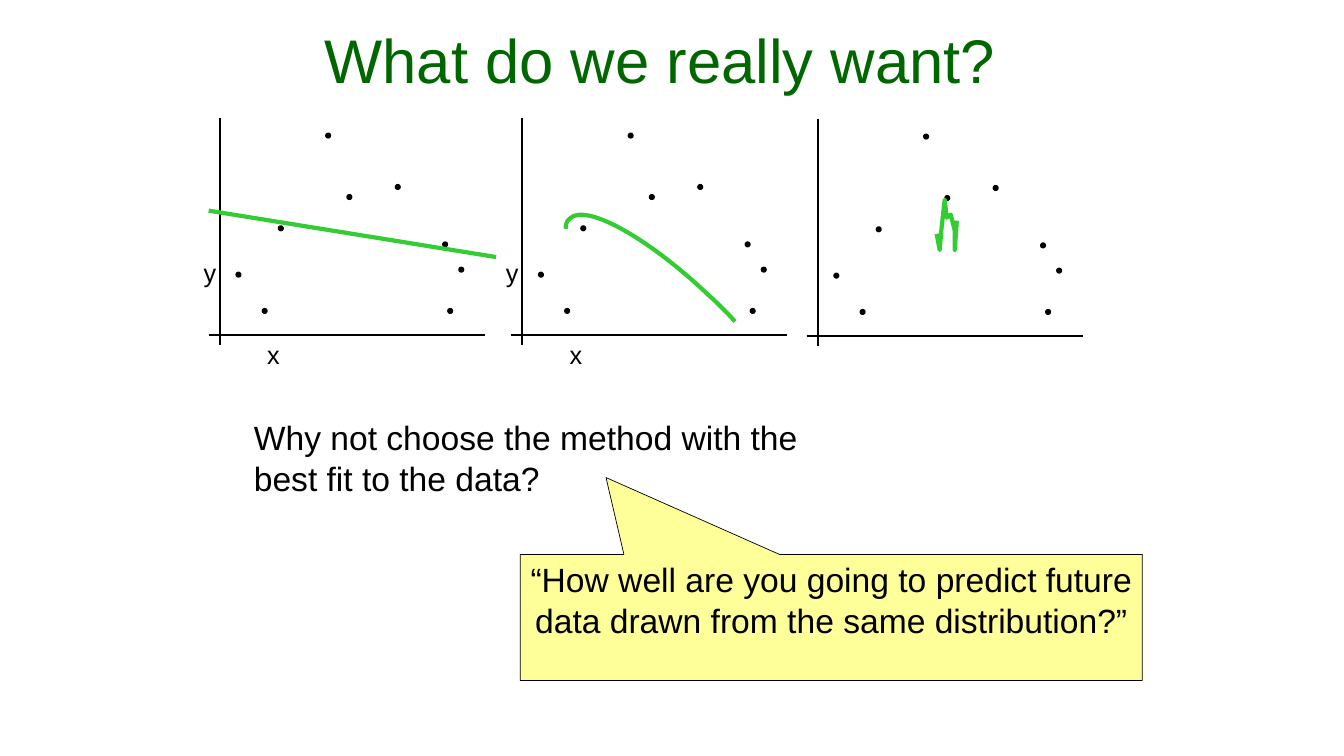
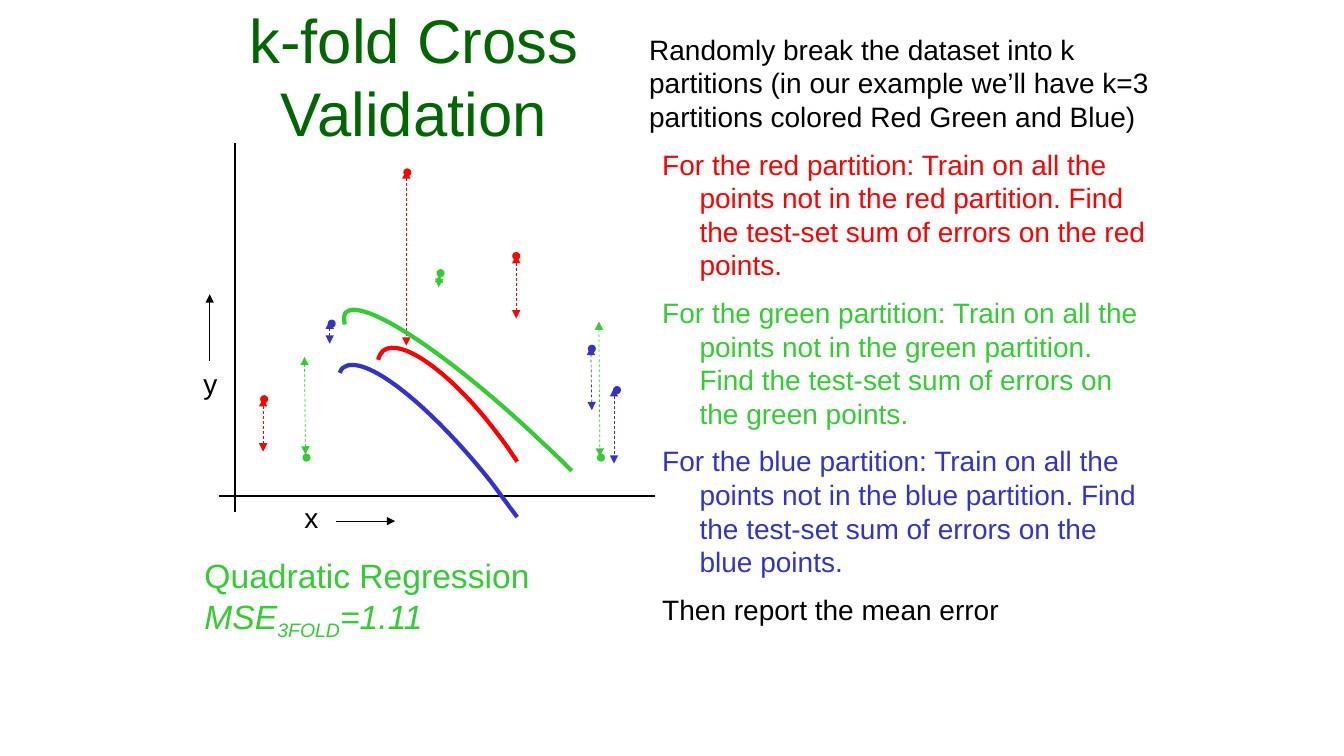
import pptx
import pptx.util
import pptx.dml.color
import pptx.enum.dml
import pptx.enum.shapes
import pptx.enum.text
import pptx.oxml
import pptx.oxml.ns
from pptx.util import Inches

FONT = "Arial"
BLACK, TITLE, NOTE = "000000", "006600", "FFFF99"
RED, GREEN, BLUE = "FF0000", "33CC33", "3333CC"
SHAPE = pptx.enum.shapes.MSO_SHAPE
ALIGN = pptx.enum.text.PP_ALIGN
ANCHOR = pptx.enum.text.MSO_ANCHOR
qn = pptx.oxml.ns.qn
NS = pptx.oxml.ns.nsdecls("a")

# Data points, from the top left of a small plot
POINTS = [(0.27, 1.53), (0.53, 1.89), (0.69, 1.07), (1.16, 0.15), (1.37, 0.76),
          (1.85, 0.66), (2.37, 1.89), (2.48, 1.48), (2.32, 1.23)]
QUADRATIC = [(2.22, 2.02), (2.14, 1.93), (2.05, 1.84), (1.96, 1.76), (1.35, 1.18),
             (0.73, 0.84), (0.58, 1), (0.55, 1.02), (0.54, 1.06), (0.54, 1.1)]
JOINED = [(1.29, 1.14), (1.32, 1.3), (1.34, 1.07), (1.37, 0.8), (1.39, 0.98),
          (1.43, 0.95), (1.47, 1.11), (1.47, 1.3), (1.49, 1.01)]

# Each fold: colour, points, error spans, Bezier controls of its fitted curve
FOLDS = [
    (RED, [(0.41, 2.5), (1.83, 0.25), (2.91, 1.08)],
     [(0.44, 2.53, 0.44, 3.06), (1.86, 0.27, 1.86, 2.01), (2.95, 1.11, 2.95, 1.74)],
     [(2.96, 3.16), (2.9, 3.07), (2.84, 2.98), (2.77, 2.89), (2.32, 2.29),
      (1.81, 1.92), (1.63, 2.06), (1.61, 2.08), (1.59, 2.11), (1.58, 2.15)]),
    (GREEN, [(0.83, 3.08), (2.16, 1.25), (3.75, 3.08)],
     [(0.86, 3.09, 0.85, 2.12), (3.77, 1.77, 3.78, 3.11), (2.19, 1.3, 2.18, 1.43)],
     [(3.5, 3.25), (3.41, 3.16), (3.32, 3.07), (3.23, 2.99), (2.3, 2.1),
      (1.42, 1.52), (1.26, 1.68), (1.24, 1.7), (1.24, 1.75), (1.25, 1.8)]),
    (BLUE, [(1.08, 1.75), (3.91, 2.41), (3.66, 2)],
     [(1.1, 1.99, 1.1, 1.76), (3.69, 2.02, 3.7, 2.65), (3.92, 2.43, 3.92, 3.18)],
     [(2.96, 3.71), (2.87, 3.59), (2.79, 3.48), (2.7, 3.36), (2.08, 2.58),
      (1.43, 2.07), (1.23, 2.23), (1.22, 2.24), (1.21, 2.25), (1.2, 2.28)]),
]


def rgb(value):
    return pptx.dml.color.RGBColor.from_string(value)


# Text
def add_run(p, text, size=20, color=BLACK, italic=False, baseline=0):
    r = p.add_run()
    r.text = text
    r.font.name, r.font.size = FONT, pptx.util.Pt(size)
    r.font.color.rgb = rgb(color)
    if italic:
        r.font.italic = True
    if baseline:
        r._r.get_or_add_rPr().set("baseline", str(baseline * 1000))


def add_text(s, box, text, align=ALIGN.LEFT, anchor=ANCHOR.TOP, **fmt):
    tf = s.shapes.add_textbox(*map(Inches, box)).text_frame
    tf.word_wrap, tf.vertical_anchor = True, anchor
    tf.paragraphs[0].alignment = align
    add_run(tf.paragraphs[0], text, **fmt)
    return tf


def add_title(s, box, text):
    add_text(s, box, text, ALIGN.CENTER, ANCHOR.BOTTOM, size=44, color=TITLE)


# Drawing
def add_line(s, x1, y1, x2, y2, color=BLACK, width=1.5, dash=False, ends=()):
    line = s.shapes.add_connector(pptx.enum.shapes.MSO_CONNECTOR.STRAIGHT,
                                  *map(Inches, (x1, y1, x2, y2)))
    line.line.color.rgb = rgb(color)
    line.line.width = pptx.util.Pt(width)
    if dash:
        line.line.dash_style = pptx.enum.dml.MSO_LINE.DASH
    spPr = line._element.spPr
    for end in ends:
        spPr.find(qn("a:ln")).append(
            pptx.oxml.parse_xml(f'<a:{end} {NS} type="triangle"/>'))
    spPr.append(pptx.oxml.parse_xml(f"<a:effectLst {NS}/>"))


def add_filled(s, shape, box, fill, line=None, width=0.75):
    sp = s.shapes.add_shape(shape, *map(Inches, box))
    sp.shadow.inherit = False
    sp.fill.solid()
    sp.fill.fore_color.rgb = rgb(fill)
    if line:
        sp.line.color.rgb = rgb(line)
        sp.line.width = pptx.util.Pt(width)
    else:
        sp.line.fill.background()
    return sp


def add_path(s, x, y, points, color):
    pts = [(Inches(x + px), Inches(y + py)) for px, py in points]
    builder = s.shapes.build_freeform(*pts[0])
    builder.add_line_segments(pts[1:], close=False)
    sp = builder.convert_to_shape()
    sp.shadow.inherit = False
    sp.fill.background()
    sp.line.color.rgb = rgb(color)
    sp.line.width = pptx.util.Pt(3)
    return sp


def add_curve(s, x, y, controls, color):
    """Draw cubic curves: each three segments become one Bezier."""
    sp = add_path(s, x, y, controls, color)
    segments = list(sp._element.iter(qn("a:lnTo")))
    for i in range(0, len(segments), 3):
        curve = pptx.oxml.parse_xml(f"<a:cubicBezTo {NS}/>")
        segments[i].addprevious(curve)
        for segment in segments[i:i + 3]:
            curve.append(segment[0])
            segment.getparent().remove(segment)


# Axes cross inset from the left and the bottom of the plot box
def add_axes(s, x, y, w, h, inset_x, inset_y):
    add_line(s, x + inset_x, y, x + inset_x, y + h)
    add_line(s, x, y + h - inset_y, x + w, y + h - inset_y)


def small_plot(s, x, y, labels=True):
    add_axes(s, x, y, 2.74, 2.25, 0.11, 0.1)
    for px, py in POINTS:
        add_filled(s, SHAPE.OVAL, (x + px, y + py, 0.05, 0.05), BLACK, BLACK)
    if labels:
        add_text(s, (x + 0.48, y + 2.15, 0.21, 0.4), "x", size=18)
        add_text(s, (x - 0.15, y + 1.33, 0.21, 0.4), "y", size=18)


def fold_plot(s, x, y):
    add_axes(s, x, y, 4.33, 3.66, 0.16, 0.16)
    add_text(s, (x + 0.75, y + 3.5, 0.33, 0.43), "x")
    add_line(s, x + 1.16, y + 3.75, x + 1.75, y + 3.75, width=0.75, ends=["tailEnd"])
    add_text(s, (x - 0.25, y + 2.17, 0.33, 0.43), "y")
    add_line(s, x - 0.09, y + 2.16, x - 0.09, y + 1.5, width=0.75, ends=["tailEnd"])
    for color, points, errors, curve in FOLDS:
        for px, py in points:
            add_filled(s, SHAPE.OVAL, (x + px, y + py, 0.08, 0.08), color)
        for x1, y1, x2, y2 in errors:
            add_line(s, x + x1, y + y1, x + x2, y + y2, color, 0.5, True,
                     ["headEnd", "tailEnd"])
        add_curve(s, x, y, curve, color)


def fold_steps(s, box):
    tf = add_text(s, box, "Randomly break the dataset into k partitions (in our example "
                  "we’ll have k=3 partitions colored Red Green and Blue)")
    steps = [(f"For the {name} partition: Train on all the points not in the {name} "
              f"partition. Find the test-set sum of errors on the {name} points.", color)
             for name, color in (("red", RED), ("green", GREEN), ("blue", BLUE))]
    for text, color in steps + [("Then report the mean error", BLACK)]:
        p = tf.add_paragraph()
        p.level = 1
        p.space_before = pptx.util.Pt(10)
        pPr = p._p.get_or_add_pPr()
        pPr.set("marL", str(Inches(0.5)))
        pPr.set("indent", str(Inches(-0.37)))
        add_run(p, text, color=color)


def callout(s, box, text):
    sp = add_filled(s, SHAPE.RECTANGULAR_CALLOUT, box, NOTE, BLACK, 0.5)
    sp.adjustments[0], sp.adjustments[1] = -0.362, -1.11
    tf = sp.text_frame
    tf.word_wrap, tf.vertical_anchor = True, ANCHOR.TOP
    tf.paragraphs[0].alignment = ALIGN.CENTER
    add_run(tf.paragraphs[0], text, size=24)


# Slides
def fit_slide(s):
    add_title(s, (0.33, 0.17, 12.44, 0.83), "What do we really want?")
    small_plot(s, 2.07, 1.17)
    add_line(s, 2.07, 2.09, 4.92, 2.55, GREEN, 3)
    small_plot(s, 5.07, 1.17)
    add_curve(s, 5.07, 1.17, QUADRATIC, GREEN)
    small_plot(s, 8, 1.18, labels=False)
    add_path(s, 8, 1.18, JOINED, GREEN)
    add_text(s, (2.42, 4.09, 5.67, 0.91),
             "Why not choose the method with the best fit to the data?", size=24)
    callout(s, (5.16, 5.5, 6.17, 1.25), "“How well are you going to predict future "
            "data drawn from the same distribution?”")


def fold_slide(s):
    add_title(s, (1.93, 0.2, 4.35, 1.33), "k-fold Cross Validation")
    fold_plot(s, 2.17, 1.42)
    fold_steps(s, (6.34, 0.27, 5.16, 6.16))
    tf = add_text(s, (1.93, 5.46, 4.24, 0.91), "Quadratic Regression ",
                  size=24, color=GREEN)
    for text, baseline in (("MSE", 0), ("3FOLD", -25), ("=1.11", 0)):
        add_run(tf.paragraphs[0], text, size=24, color=GREEN, italic=True,
                baseline=baseline)


def main():
    prs = pptx.Presentation()
    prs.slide_width, prs.slide_height = Inches(13.33), Inches(7.5)
    for build in (fit_slide, fold_slide):
        build(prs.slides.add_slide(prs.slide_layouts[6]))
    prs.save("out.pptx")


if __name__ == "__main__":
    main()
